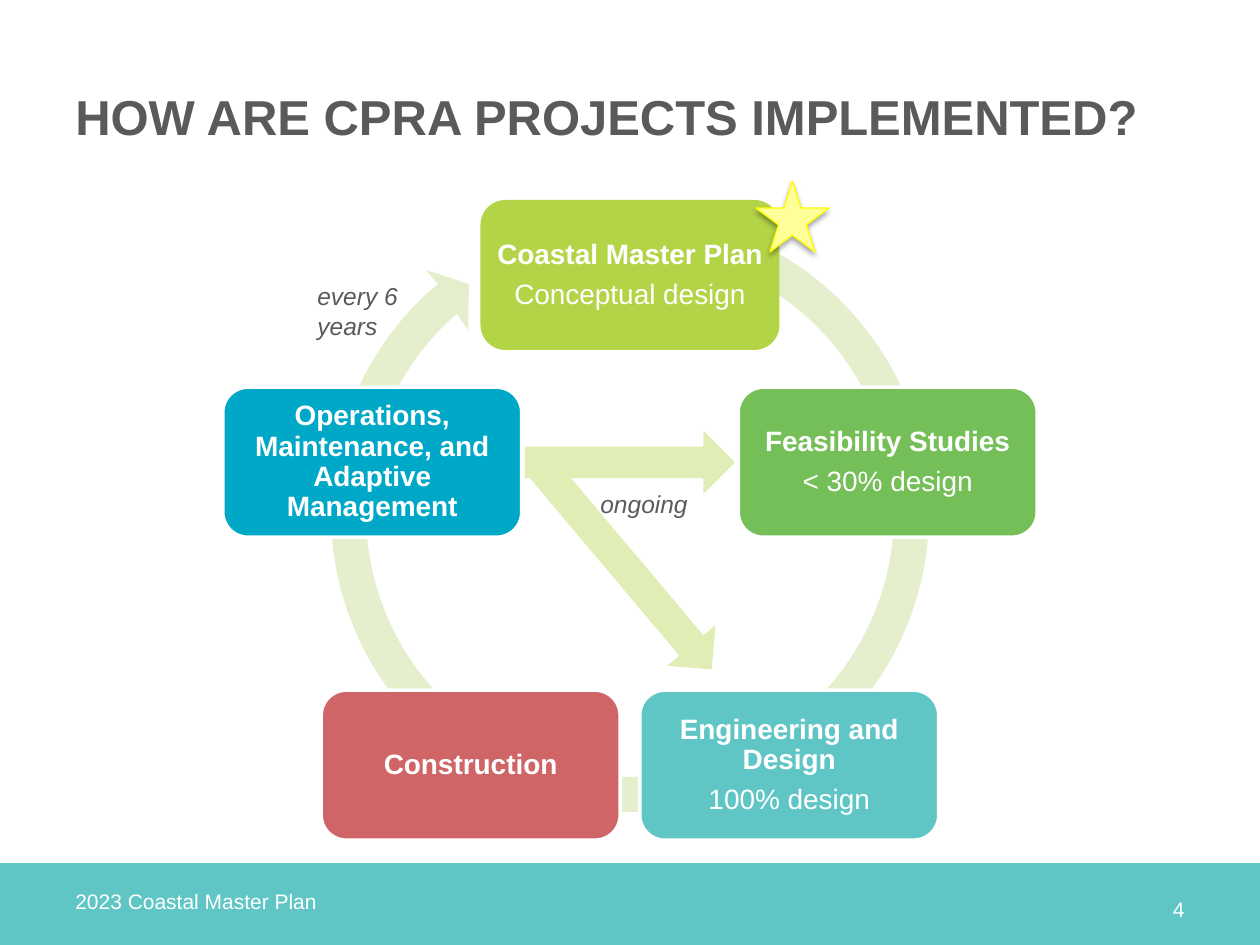
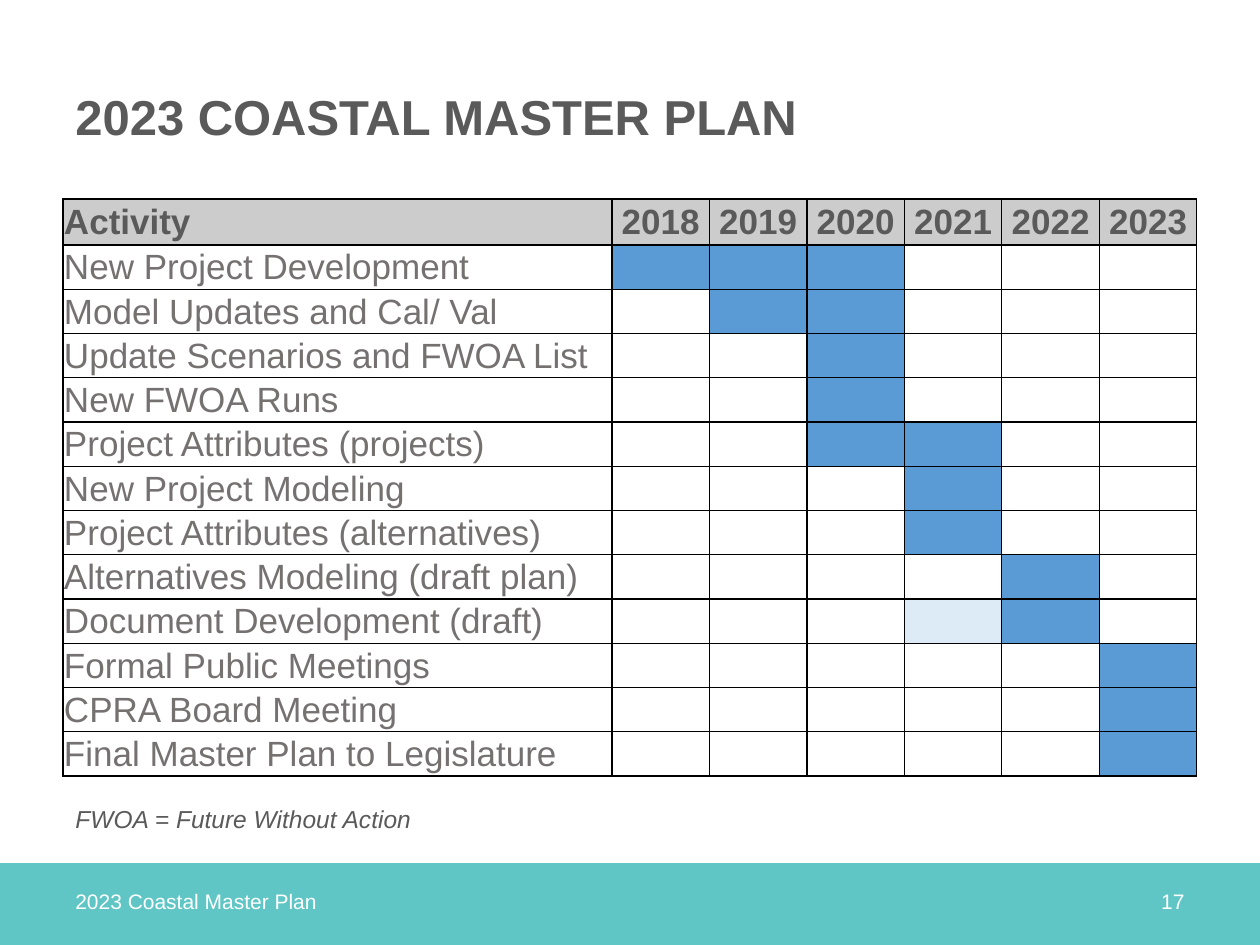
from dataclasses import dataclass
from math import cos, radians, sin, tan

from lxml.etree import SubElement
from pptx import Presentation
from pptx.dml.color import RGBColor
from pptx.enum.shapes import MSO_SHAPE
from pptx.enum.text import MSO_ANCHOR, PP_ALIGN
from pptx.oxml import parse_xml
from pptx.oxml.ns import nsdecls, qn
from pptx.util import Emu, Pt


@dataclass(frozen=True)
class Theme:
    font: str = "Arial"
    title_size: int = 28
    table_size: int = 20
    node_size: int = 16
    note_size: int = 14
    footer_size: int = 12
    white: RGBColor = RGBColor.from_string("FFFFFF")
    text: RGBColor = RGBColor.from_string("5A5A5B")
    activity: RGBColor = RGBColor.from_string("757171")
    teal: RGBColor = RGBColor.from_string("5FC6C5")
    lime: RGBColor = RGBColor.from_string("B4D447")
    green: RGBColor = RGBColor.from_string("74BF58")
    red: RGBColor = RGBColor.from_string("CF6567")
    blue: RGBColor = RGBColor.from_string("00A8C8")
    ring: RGBColor = RGBColor.from_string("E5EFCE")
    arrow: RGBColor = RGBColor.from_string("E0EDB4")
    star: RGBColor = RGBColor.from_string("FFFF99")
    star_line: RGBColor = RGBColor.from_string("FFFF00")
    header: RGBColor = RGBColor.from_string("CCCCCC")
    busy: RGBColor = RGBColor.from_string("5B9BD5")
    partial: RGBColor = RGBColor.from_string("DDEBF7")


theme = Theme()
SCALE = 914400 / 126


def px(*lengths):
    return [Emu(round(length * SCALE)) for length in lengths]


def write(frame, text, size, colour, bold=False, italic=False, align=PP_ALIGN.LEFT):
    frame.text = text
    for para in frame.paragraphs:
        para.alignment = align
        for span in para.runs:
            span.font.name = theme.font
            span.font.size = Pt(size)
            span.font.color.rgb = colour
            span.font.bold = bold
            span.font.italic = italic


deck = Presentation()
deck.slide_width, deck.slide_height = px(1260, 945)

pages = []
for title, number, number_top in (
    ("HOW ARE CPRA PROJECTS IMPLEMENTED?", "4", 884),
    ("2023 COASTAL MASTER PLAN", "17", 876),
):
    page = deck.slides.add_slide(deck.slide_layouts[6])
    pages.append(page)
    band = page.shapes.add_shape(MSO_SHAPE.RECTANGLE, *px(0, 863, 1260, 82))
    band.shadow.inherit = False
    band.fill.solid()
    band.fill.fore_color.rgb = theme.teal
    band.line.fill.background()
    for area, text, size, colour, bold, align in (
        ((63, 42, 1134, 147), title, theme.title_size, theme.text, True, PP_ALIGN.LEFT),
        ((63, 876, 1008, 50), "2023 Coastal Master Plan", theme.footer_size, theme.white, False, PP_ALIGN.LEFT),
        ((1071, number_top, 126, 50), number, theme.footer_size, theme.white, False, PP_ALIGN.RIGHT),
    ):
        box = page.shapes.add_textbox(*px(*area))
        box.text_frame.word_wrap = True
        box.text_frame.vertical_anchor = MSO_ANCHOR.MIDDLE
        write(box.text_frame, text, size, colour, bold, align=align)

cycle_page, schedule_page = pages

RING_LEFT, RING_TOP, RING_SIZE = 312, 195, 636
OUTER, INNER, ARC_COUNT = 299, 264, 5
corners = [
    px(RING_LEFT + x, RING_TOP + y)
    for x, y in ((0, 0), (RING_SIZE, 0), (RING_SIZE, RING_SIZE), (0, RING_SIZE))
]
builder = cycle_page.shapes.build_freeform(*corners[0])
builder.add_line_segments(corners[1:], close=True)
ring = builder.convert_to_shape()
ring.shadow.inherit = False
ring.fill.solid()
ring.fill.fore_color.rgb = theme.ring
ring.line.fill.background()

curves = []
for radius, start, end in ((OUTER, -70, 230), (INNER, 229, -70)):
    step = radians(end - start) / ARC_COUNT
    pull = 4 / 3 * tan(step / 4)
    middle = RING_SIZE / 2
    arc = []
    for index in range(ARC_COUNT):
        a = radians(start) + index * step
        b = a + step
        arc.append(("a:cubicBezTo", [
            (middle + radius * (cos(a) - pull * sin(a)), middle + radius * (sin(a) + pull * cos(a))),
            (middle + radius * (cos(b) + pull * sin(b)), middle + radius * (sin(b) - pull * cos(b))),
            (middle + radius * cos(b), middle + radius * sin(b)),
        ]))
    first = (middle + radius * cos(radians(start)), middle + radius * sin(radians(start)))
    curves.append((first, arc))

(outer_start, outer_arc), (inner_start, inner_arc) = curves
arrowhead = [(114, 75), (157, 89), (156, 135), inner_start]
segments = [("a:moveTo", [outer_start]), *outer_arc]
segments += [("a:lnTo", [point]) for point in arrowhead]
segments += [*inner_arc, ("a:close", [])]
outline = ring._element.find(".//" + qn("a:path"))
for old_segment in list(outline):
    outline.remove(old_segment)
for tag, points in segments:
    segment = SubElement(outline, qn(tag))
    for point in points:
        x, y = px(*point)
        SubElement(segment, qn("a:pt"), x=str(x), y=str(y))

NODE_WIDTH, NODE_HEIGHT, NODE_RADIUS = 299, 150, 271
steps = (
    ("Coastal Master Plan\nConceptual design", theme.lime),
    ("Feasibility Studies\n< 30% design", theme.green),
    ("Engineering and Design\n100% design", theme.teal),
    ("Construction", theme.red),
    ("Operations, Maintenance, and Adaptive Management", theme.blue),
)
for index, (text, colour) in enumerate(steps):
    turn = radians(index * 360 / len(steps))
    left = 630 + NODE_RADIUS * sin(turn) - NODE_WIDTH / 2
    top = 546 - NODE_RADIUS * cos(turn) - NODE_HEIGHT / 2
    node = cycle_page.shapes.add_shape(
        MSO_SHAPE.ROUNDED_RECTANGLE, *px(left, top, NODE_WIDTH, NODE_HEIGHT)
    )
    node.shadow.inherit = False
    node.fill.solid()
    node.fill.fore_color.rgb = colour
    if index:
        node.line.color.rgb = theme.white
        node.line.width = Pt(2)
    else:
        node.line.fill.background()
    frame = node.text_frame
    frame.word_wrap = True
    frame.vertical_anchor = MSO_ANCHOR.MIDDLE
    frame.margin_left, frame.margin_top, frame.margin_right, frame.margin_bottom = px(8, 8, 8, 8)
    write(frame, text, theme.node_size, theme.white, True, align=PP_ALIGN.CENTER)
    for para in frame.paragraphs:
        para.line_spacing = 0.9
    for para in frame.paragraphs[1:]:
        para.space_before = Pt(5.6)
        para.runs[0].font.bold = False

for area, rotation in (((525, 431, 210, 63), 0), ((488, 534, 272, 63), 49.9)):
    arrow = cycle_page.shapes.add_shape(MSO_SHAPE.RIGHT_ARROW, *px(*area))
    arrow.rotation = rotation
    arrow.shadow.inherit = False
    arrow.fill.solid()
    arrow.fill.fore_color.rgb = theme.arrow
    arrow.line.fill.background()

for page, area, text in (
    (cycle_page, (305, 275, 126, 72), "every 6 years"),
    (cycle_page, (588, 483, 116, 43), "ongoing"),
    (schedule_page, (63, 798, 1134, 43), "FWOA = Future Without Action"),
):
    note = page.shapes.add_textbox(*px(*area))
    note.text_frame.word_wrap = True
    write(note.text_frame, text, theme.note_size, theme.text, italic=True)

star = cycle_page.shapes.add_shape(MSO_SHAPE.STAR_5_POINT, *px(756, 181, 73, 71))
star.shadow.inherit = False
star.fill.solid()
star.fill.fore_color.rgb = theme.star
star.line.color.rgb = theme.star_line
star.line.width = Pt(0.75)
effects = star._element.spPr.find(qn("a:effectLst"))
effects.append(parse_xml(
    f'<a:outerShdw {nsdecls("a")} blurRad="{Pt(3.1)}" dist="{Pt(1.8)}" dir="5400000" rotWithShape="0">'
    '<a:srgbClr val="000000"><a:alpha val="35000"/></a:srgbClr></a:outerShdw>'
))

years = range(2018, 2024)
activities = (
    ("New Project Development", (2018, 2019, 2020)),
    ("Model Updates and Cal/ Val", (2019, 2020)),
    ("Update Scenarios and FWOA List", (2020,)),
    ("New FWOA Runs", (2020,)),
    ("Project Attributes (projects)", (2020, 2021)),
    ("New Project Modeling", (2021,)),
    ("Project Attributes (alternatives)", (2021,)),
    ("Alternatives Modeling (draft plan)", (2022,)),
    ("Document Development (draft)", (2022,)),
    ("Formal Public Meetings", (2023,)),
    ("CPRA Board Meeting", (2023,)),
    ("Final Master Plan to Legislature", (2023,)),
)
partial_year = ("Document Development (draft)", 2021)

TABLE_WIDTH, TABLE_HEIGHT, ACTIVITY_WIDTH, HEADER_HEIGHT = 1134, 577, 549, 46
schedule = schedule_page.shapes.add_table(
    len(activities) + 1, len(years) + 1, *px(63, 199, TABLE_WIDTH, TABLE_HEIGHT)
).table
schedule.first_row = False
schedule.horz_banding = False
year_width = (TABLE_WIDTH - ACTIVITY_WIDTH) / len(years)
row_height = (TABLE_HEIGHT - HEADER_HEIGHT) / len(activities)
for index, column in enumerate(schedule.columns):
    column.width = px(year_width if index else ACTIVITY_WIDTH)[0]
for index, row in enumerate(schedule.rows):
    row.height = px(row_height if index else HEADER_HEIGHT)[0]

for cell in schedule.iter_cells():
    cell.margin_left, cell.margin_top, cell.margin_right, cell.margin_bottom = px(1, 1, 1, 0)
    cell.vertical_anchor = MSO_ANCHOR.MIDDLE
    properties = cell._tc.get_or_add_tcPr()
    for side in ("a:lnL", "a:lnR", "a:lnT", "a:lnB"):
        border = SubElement(properties, qn(side), w=str(Pt(0.75)))
        SubElement(SubElement(border, qn("a:solidFill")), qn("a:srgbClr"), val="000000")
    cell.fill.background()

for index, heading in enumerate(("Activity", *years)):
    cell = schedule.cell(0, index)
    cell.fill.solid()
    cell.fill.fore_color.rgb = theme.header
    align = PP_ALIGN.CENTER if index else PP_ALIGN.LEFT
    write(cell.text_frame, str(heading), theme.table_size, theme.text, True, align=align)

for row, (activity, busy_years) in enumerate(activities, 1):
    write(schedule.cell(row, 0).text_frame, activity, theme.table_size, theme.activity)
    for column, year in enumerate(years, 1):
        is_partial = (activity, year) == partial_year
        if year in busy_years or is_partial:
            fill = schedule.cell(row, column).fill
            fill.solid()
            fill.fore_color.rgb = theme.partial if is_partial else theme.busy

deck.save("out.pptx")
